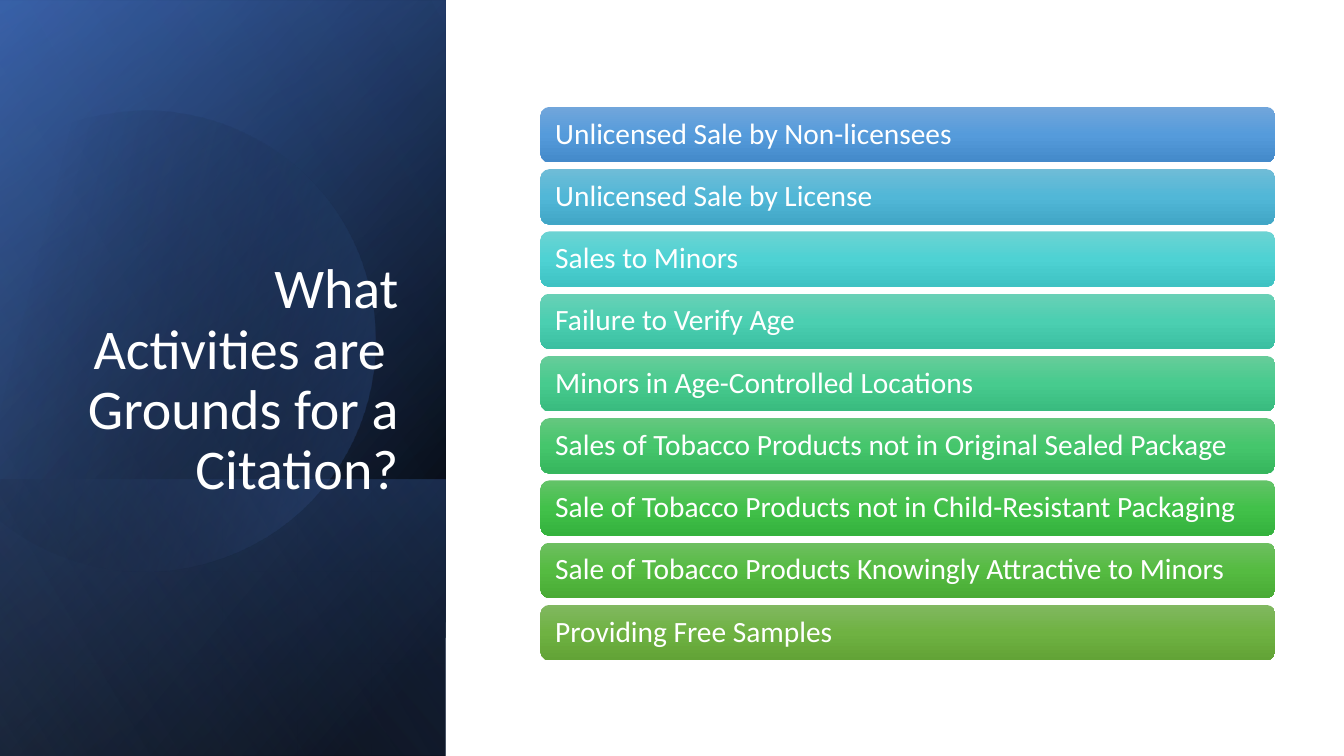
import math
from lxml import etree
from pptx import Presentation
from pptx import util as u
from pptx.dml.color import RGBColor
from pptx.enum import shapes, text
from pptx.oxml.ns import qn

WHITE = RGBColor(0xFF, 0xFF, 0xFF)
BLACK = RGBColor(0x00, 0x00, 0x00)
NAVY = RGBColor(0x2F, 0x55, 0x97)
BLUE = RGBColor(0x44, 0x72, 0xC4)
PALE = RGBColor(0x8F, 0xAA, 0xDC)
TINTS = [RGBColor.from_string(c) for c in (
    "71A6DB 6FBCD7 6CD3D3 69D0B6 67CC9A 65C77F 63C368 6EBF61 81B861").split()]
MIDS = [RGBColor.from_string(c) for c in (
    "559BDB 51B7D7 4ED2D3 4BCFB1 47CB8E 45C66C 42C14A 55BB41 6FB242").split()]
SHADES = [RGBColor.from_string(c) for c in (
    "448ACA 41A6C6 3EC2C3 3BBFA1 39BB7F 36B65D 34B23D 49AB35 62A336").split()]


def blend(shape, stops, angle):
    shape.shadow.inherit = False
    shape.line.fill.background()
    shape.fill.gradient()
    grad = shape._element.spPr.find(qn("a:gradFill"))
    grad.find(qn("a:lin")).set("ang", str(angle * 60000))
    ramp = grad.find(qn("a:gsLst"))
    for old in list(ramp):
        ramp.remove(old)
    for pos, color, alpha in stops:
        stop = etree.SubElement(ramp, qn("a:gs"), pos=str(pos * 1000))
        fill = etree.SubElement(stop, qn("a:srgbClr"), val=str(color))
        if alpha < 100:
            etree.SubElement(fill, qn("a:alpha"), val=str(alpha * 1000))


def write(frame, words, size, align, anchor):
    frame.word_wrap = True
    frame.vertical_anchor = anchor
    frame.text = words
    para = frame.paragraphs[0]
    para.alignment = align
    para.line_spacing = 0.9
    font = para.runs[0].font
    font.name = "Calibri"
    font.size = u.Pt(size)
    font.color.rgb = WHITE


deck = Presentation()
deck.slide_width = u.Inches(13.33)
deck.slide_height = u.Inches(7.5)
slide = deck.slides.add_slide(deck.slide_layouts[6])
tree = slide.shapes

panels = [
    (-1.54, 1.54, 7.5, 50, [(8, BLACK, 100), (100, NAVY, 100)]),
    (-1.54, 1.55, 7.5, 30, [(0, BLACK, 0), (99, BLUE, 46)]),
    (0.84, 3.92, 2.74, 130, [(2, BLUE, 29), (100, BLACK, 30)]),
    (-1.54, 1.54, 7.5, 120, [(0, BLACK, 0), (99, PALE, 11)]),
]
curves = [
    [(1.49, 1.1), (2.46, 1.12), (3.35, 1.77), (3.63, 2.75)],
    [(3.63, 2.75), (3.98, 3.97), (3.28, 5.23), (2.07, 5.58)],
    [(2.07, 5.58), (1.31, 5.8), (0.53, 5.61), (-0.03, 5.14)],
    [(-0.15, 5.03)],
    [(-0.15, 1.75)],
    [(0, 1.61), (0.23, 1.42), (0.5, 1.28), (0.8, 1.19)],
    [(0.8, 1.19), (1.03, 1.13), (1.26, 1.1), (1.49, 1.1)],
]
STEPS = 24
TILT = 16.1
MID_X, MID_Y = 1.585, 3.345

for index, (left, top, width, angle, stops) in enumerate(panels):
    if index == 3:
        dots = []
        for curve in curves:
            last = len(curve) - 1
            for step in range(STEPS + 1 if last else 1):
                t = step / STEPS
                mix = [math.comb(last, k) * t**k * (1 - t)**(last - k)
                       for k in range(last + 1)]
                x = sum(m * p[0] for m, p in zip(mix, curve)) - MID_X
                y = sum(m * p[1] for m, p in zip(mix, curve)) - MID_Y
                cos = math.cos(math.radians(TILT))
                sin = math.sin(math.radians(TILT))
                dots.append((u.Inches(MID_X + x * cos - y * sin),
                             u.Inches(MID_Y + x * sin + y * cos)))
        pen = tree.build_freeform(*dots[0])
        pen.add_line_segments(dots[1:], close=True)
        disc = pen.convert_to_shape()
        disc.rotation = 360 - TILT
        blend(disc, [(29, BLACK, 0), (100, BLUE, 43)], 30)
    panel = tree.add_shape(
        shapes.MSO_SHAPE.RECTANGLE, u.Inches(left), u.Inches(top),
        u.Inches(width), u.Inches(4.42))
    panel.rotation = 90
    panel._element.spPr.find(qn("a:xfrm")).set("flipH", "1")
    blend(panel, stops, angle)

title = tree.add_textbox(
    u.Inches(0.56), u.Inches(1.84), u.Inches(3.49), u.Inches(3.19))
write(title.text_frame, "What Activities are  Grounds for a Citation?", 40,
      text.PP_ALIGN.RIGHT, text.MSO_ANCHOR.BOTTOM)

grounds = [
    "Unlicensed Sale by Non-licensees",
    "Unlicensed Sale by License",
    "Sales to Minors",
    "Failure to Verify Age",
    "Minors in Age-Controlled Locations",
    "Sales of Tobacco Products not in Original Sealed Package",
    "Sale of Tobacco Products not in Child-Resistant Packaging",
    "Sale of Tobacco Products Knowingly Attractive to Minors",
    "Providing Free Samples",
]
PITCH = (6 - 1.06) / (len(grounds) - 1)
for row, (words, tint, mid, shade) in enumerate(
        zip(grounds, TINTS, MIDS, SHADES)):
    bar = tree.add_shape(
        shapes.MSO_SHAPE.ROUNDED_RECTANGLE, u.Inches(5.36),
        u.Inches(1.06 + row * PITCH), u.Inches(7.29), u.Inches(0.55))
    blend(bar, [(0, tint, 100), (50, mid, 100), (100, shade, 100)], 90)
    frame = bar.text_frame
    frame.margin_left = frame.margin_right = u.Inches(0.12)
    frame.margin_top = frame.margin_bottom = u.Inches(0.09)
    write(frame, words, 21, text.PP_ALIGN.LEFT, text.MSO_ANCHOR.MIDDLE)

deck.save("out.pptx")
